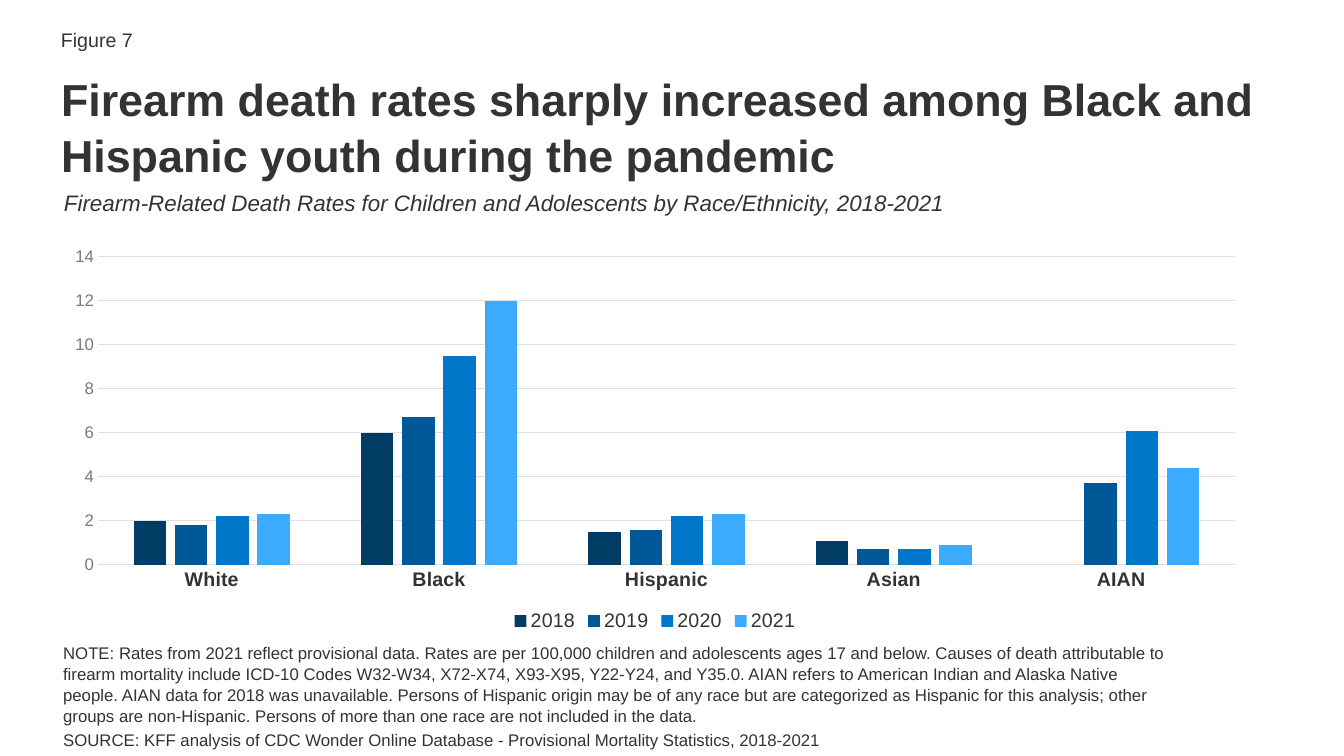
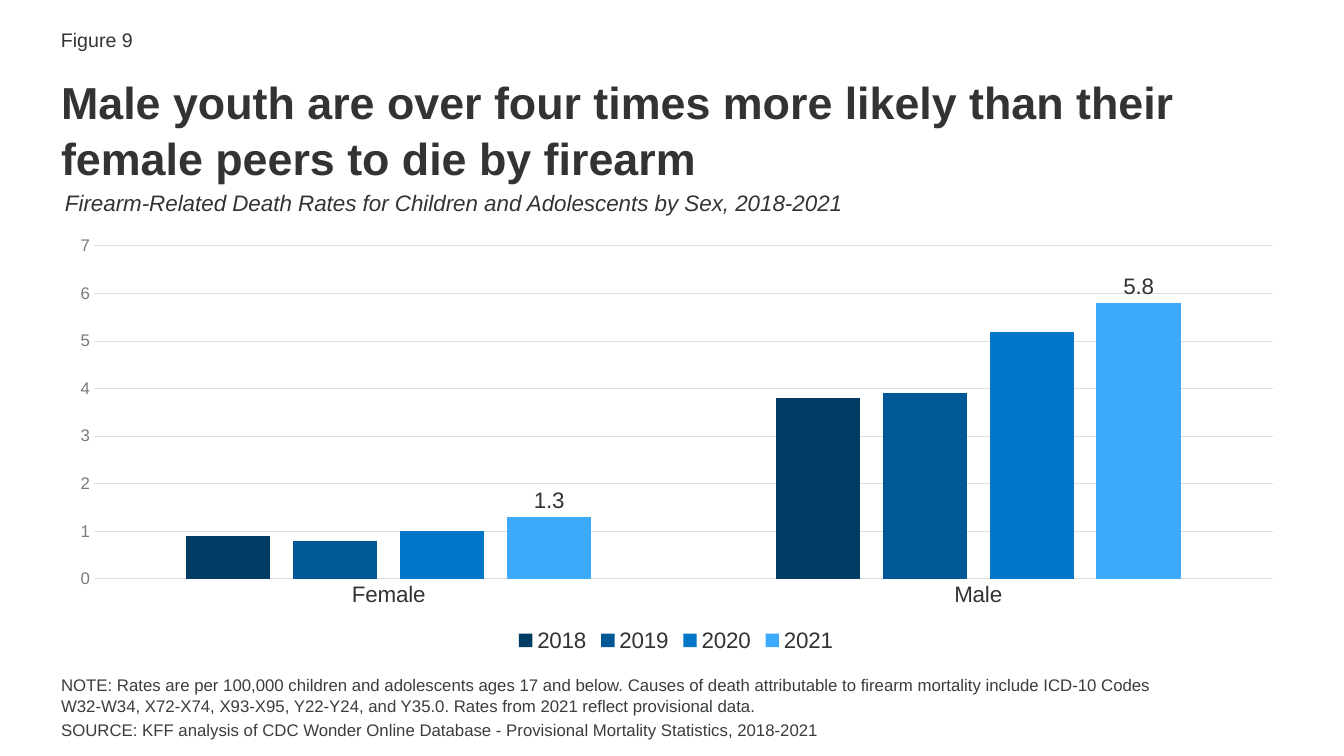
from lxml import etree
from pptx import Presentation
from pptx.chart.data import CategoryChartData
from pptx.dml.color import RGBColor
from pptx.enum.chart import XL_CHART_TYPE, XL_LABEL_POSITION, XL_LEGEND_POSITION, XL_TICK_MARK
from pptx.enum.text import MSO_ANCHOR, MSO_AUTO_SIZE
from pptx.oxml.ns import qn
from pptx.util import Pt

COLUMNS = XL_CHART_TYPE.COLUMN_CLUSTERED
OUTSIDE_END = XL_LABEL_POSITION.OUTSIDE_END
BOTTOM = XL_LEGEND_POSITION.BOTTOM
NO_TICK = XL_TICK_MARK.NONE
TOP, MIDDLE = MSO_ANCHOR.TOP, MSO_ANCHOR.MIDDLE
NO_AUTOFIT = MSO_AUTO_SIZE.NONE

# Shared style
FONT = "Arial"
TEXT = RGBColor(0x33, 0x33, 0x33)
NOTE_GRAY = RGBColor(0x39, 0x3D, 0x40)
AXIS_GRAY = RGBColor(0x7A, 0x7A, 0x7A)
GRID_GRAY = RGBColor(0xE0, 0xE0, 0xE0)
YEAR_COLORS = {
    "2018": RGBColor(0x00, 0x3C, 0x64),
    "2019": RGBColor(0x00, 0x59, 0x96),
    "2020": RGBColor(0x00, 0x77, 0xC8),
    "2021": RGBColor(0x3C, 0xAB, 0xFD),
}
PX = 914400 / 100.8
SOURCE = ("SOURCE: KFF analysis of CDC Wonder Online Database - "
          "Provisional Mortality Statistics, 2018-2021")

# Boxes are left, top, width, height; plot boxes are relative to the slide too
FIGURES = [
    {
        "label": "Figure 7",
        "title": "Firearm death rates sharply increased among Black and "
                 "Hispanic youth during the pandemic",
        "title_top": 64,
        "subtitle": "Firearm-Related Death Rates for Children and Adolescents "
                    "by Race/Ethnicity, 2018-2021",
        "subtitle_left": 54,
        "note": "NOTE: Rates from 2021 reflect provisional data. Rates are per 100,000 "
                "children and adolescents ages 17 and below. Causes of death attributable "
                "to firearm mortality include ICD-10 Codes W32-W34, X72-X74, X93-X95, "
                "Y22-Y24, and Y35.0. AIAN refers to American Indian and Alaska Native "
                "people. AIAN data for 2018 was unavailable. Persons of Hispanic origin "
                "may be of any race but are categorized as Hispanic for this analysis; "
                "other groups are non-Hispanic. Persons of more than one race are not "
                "included in the data.",
        "note_box": (53, 637, 1135, 66),
        "note_color": TEXT,
        "chart_box": (51, 240, 1208, 396),
        "plot_box": (98, 257, 1137, 308),
        "categories": ["White", "Black", "Hispanic", "Asian", "AIAN"],
        "values": {
            "2018": [2, 6, 1.5, 1.1, None],
            "2019": [1.8, 6.7, 1.6, 0.7, 3.7],
            "2020": [2.2, 9.5, 2.2, 0.7, 6.1],
            "2021": [2.3, 12, 2.3, 0.9, 4.4],
        },
        "maximum": 14, "step": 2,
        "label_size": 14, "bold_categories": True, "labelled_year": None,
    },
    {
        "label": "Figure 9",
        "title": "Male youth are over four times more likely than their "
                 "female peers to die by firearm",
        "title_top": 67,
        "subtitle": "Firearm-Related Death Rates for Children and Adolescents "
                    "by Sex, 2018-2021",
        "subtitle_left": 55,
        "note": "NOTE: Rates are per 100,000 children and adolescents ages 17 and below. "
                "Causes of death attributable to firearm mortality include ICD-10 Codes "
                "W32-W34, X72-X74, X93-X95, Y22-Y24, and Y35.0. Rates from 2021 reflect "
                "provisional data.",
        "note_box": (51, 669, 1135, 66),
        "note_color": NOTE_GRAY,
        "chart_box": (55, 229, 1242, 428),
        "plot_box": (94, 246, 1179, 333),
        "categories": ["Female", "Male"],
        "values": {
            "2018": [0.9, 3.8],
            "2019": [0.8, 3.9],
            "2020": [1, 5.2],
            "2021": [1.3, 5.8],
        },
        "maximum": 7, "step": 1,
        "label_size": 16, "bold_categories": False, "labelled_year": "2021",
    },
]


def style_font(font, size, color=TEXT, bold=False, italic=False):
    font.name, font.size, font.bold, font.italic = FONT, Pt(size), bold, italic
    font.color.rgb = color


def write_text(shape, box, lines, size, color=TEXT, anchor=TOP, spacing=1.0,
               bold=False, italic=False):
    shape.left, shape.top, shape.width, shape.height = [round(n * PX) for n in box]
    frame = shape.text_frame
    frame.word_wrap, frame.auto_size, frame.vertical_anchor = True, NO_AUTOFIT, anchor
    frame.text = "\n".join(lines)
    for index, paragraph in enumerate(frame.paragraphs):
        properties = paragraph._p.get_or_add_pPr()
        properties.set("marL", "0")
        properties.set("indent", "0")
        properties.set("algn", "l")
        etree.SubElement(properties, qn("a:buNone"))
        paragraph.line_spacing = spacing
        paragraph.space_before = Pt(2.4 if index else 0)
        style_font(paragraph.font, size, color, bold, italic)


presentation = Presentation()
presentation.slide_width, presentation.slide_height = round(1344 * PX), round(756 * PX)

for figure in FIGURES:
    slide = presentation.slides.add_slide(presentation.slide_layouts[1])

    # Figure number, title, subtitle and note
    write_text(slide.shapes.add_textbox(0, 0, 0, 0), (51, 22, 519, 35),
               [figure["label"]], 14, anchor=MIDDLE)
    write_text(slide.shapes.title, (51, figure["title_top"], 1242, 95),
               [figure["title"]], 32, spacing=1.05, bold=True)
    write_text(slide.shapes.add_textbox(0, 0, 0, 0),
               (figure["subtitle_left"], 184, 1079, 37),
               [figure["subtitle"]], 16, italic=True)
    write_text(slide.placeholders[1], figure["note_box"], [figure["note"], SOURCE], 12,
               color=figure["note_color"], spacing=1.04)

    # Column chart
    data = CategoryChartData()
    data.categories = figure["categories"]
    for year, rates in figure["values"].items():
        data.add_series(year, rates)
    chart_box = [round(n * PX) for n in figure["chart_box"]]
    chart = slide.shapes.add_chart(COLUMNS, *chart_box, data).chart
    chart.has_title = False
    style_font(chart.font, 10)
    plot = chart.plots[0]
    plot.gap_width, plot.overlap, plot.vary_by_categories = 219, -27, False
    for series in plot.series:
        series.format.fill.solid()
        series.format.fill.fore_color.rgb = YEAR_COLORS[series.name]
        if series.name == figure["labelled_year"]:
            labels = series.data_labels
            labels.show_value, labels.position = True, OUTSIDE_END
            style_font(labels.font, 16)

    # Axes and legend
    category_axis, value_axis = chart.category_axis, chart.value_axis
    for axis in (category_axis, value_axis):
        axis.major_tick_mark = axis.minor_tick_mark = NO_TICK
    style_font(category_axis.tick_labels.font, figure["label_size"],
               bold=figure["bold_categories"])
    style_font(value_axis.tick_labels.font, 12, AXIS_GRAY)
    value_axis.minimum_scale, value_axis.maximum_scale = 0, figure["maximum"]
    value_axis.major_unit = figure["step"]
    value_axis.format.line.fill.background()
    for line in (category_axis.format.line, value_axis.major_gridlines.format.line):
        line.color.rgb, line.width = GRID_GRAY, Pt(0.75)
    chart.has_legend = True
    chart.legend.position, chart.legend.include_in_layout = BOTTOM, False
    style_font(chart.legend.font, figure["label_size"])

    # Plot area position, as fractions of the chart
    left, top, width, height = figure["chart_box"]
    plot_left, plot_top, plot_width, plot_height = figure["plot_box"]
    plot_area = chart._chartSpace.find(".//" + qn("c:plotArea"))
    for old_layout in plot_area.findall(qn("c:layout")):
        plot_area.remove(old_layout)
    layout = etree.Element(qn("c:layout"))
    manual = etree.SubElement(layout, qn("c:manualLayout"))
    for tag, value in (("layoutTarget", "inner"), ("xMode", "edge"), ("yMode", "edge"),
                       ("x", (plot_left - left) / width), ("y", (plot_top - top) / height),
                       ("w", plot_width / width), ("h", plot_height / height)):
        etree.SubElement(manual, qn("c:" + tag)).set("val", str(value))
    plot_area.insert(0, layout)

presentation.save("out.pptx")
